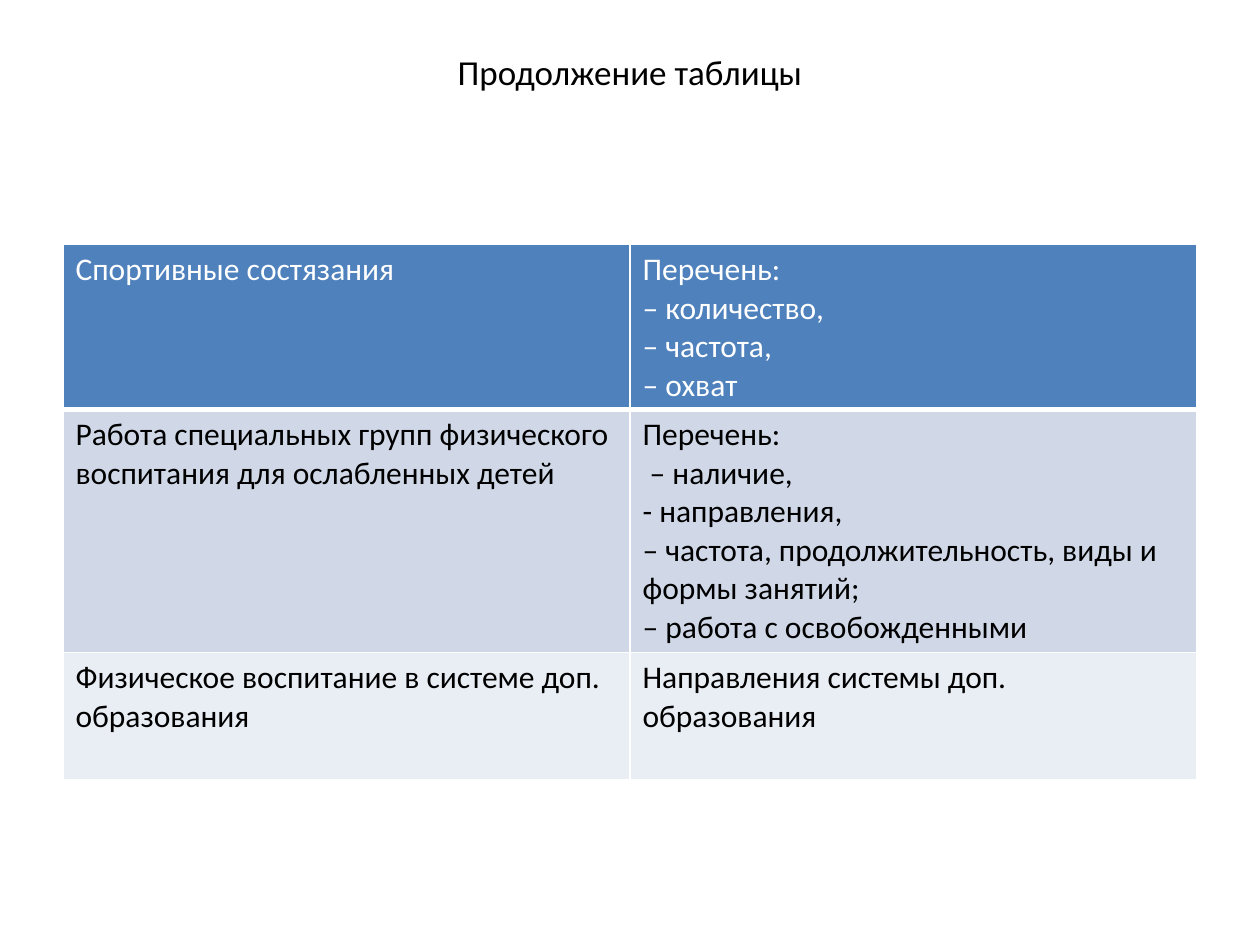
from lxml.etree import SubElement
from pptx import Presentation
from pptx.dml.color import RGBColor
from pptx.enum.text import MSO_ANCHOR as Anchor, PP_ALIGN as Align
from pptx.oxml.ns import qn
from pptx.util import Inches, Pt

WHITE = RGBColor(0xFF, 0xFF, 0xFF)
BLACK = RGBColor(0x00, 0x00, 0x00)
HEADER_BLUE = RGBColor(0x4F, 0x81, 0xBD)
BAND_DARK = RGBColor(0xD0, 0xD8, 0xE8)
BAND_LIGHT = RGBColor(0xE9, 0xED, 0xF4)

WIDTH, HEIGHT = Inches(10), Inches(7.5)
MARGIN = int(WIDTH * 0.05)
CONTENT_WIDTH = WIDTH - 2 * MARGIN
FONT = "Calibri"

# Each row: height in inches, fill, text colour, cell texts
ROWS = [
    (1.31, HEADER_BLUE, WHITE, (
        "Спортивные состязания",
        "Перечень:\n– количество,\n– частота,\n– охват")),
    (1.93, BAND_DARK, BLACK, (
        "Работа специальных групп физического воспитания для ослабленных детей",
        "Перечень:\n – наличие,\n- направления,\n"
        "– частота, продолжительность, виды и формы занятий;\n"
        "– работа с освобожденными")),
    (1.01, BAND_LIGHT, BLACK, (
        "Физическое воспитание в системе доп. образования",
        "Направления системы доп.\nобразования")),
]


def write_text(frame, text, size, color, align=Align.LEFT):
    frame.text = text
    frame.word_wrap = True
    for para in frame.paragraphs:
        para.alignment = align
        for span in para.runs:
            span.font.name = FONT
            span.font.size = Pt(size)
            span.font.bold = False
            span.font.color.rgb = color


def add_title(page, text):
    box = page.shapes.add_textbox(MARGIN, int(HEIGHT * 0.04),
                                  CONTENT_WIDTH, int(HEIGHT * 0.072))
    box.text_frame.vertical_anchor = Anchor.MIDDLE
    write_text(box.text_frame, text, 20, BLACK, Align.CENTER)


def set_borders(cell, top, bottom):
    properties = cell._tc.get_or_add_tcPr()
    for side, points in (("L", 1), ("R", 1), ("T", top), ("B", bottom)):
        line = SubElement(properties, qn(f"a:ln{side}"), w=str(Pt(points)))
        fill = SubElement(line, qn("a:solidFill"))
        SubElement(fill, qn("a:srgbClr"), val=str(WHITE))


def add_grid(page, rows):
    total = Inches(sum(row[0] for row in rows))
    table = page.shapes.add_table(len(rows), 2, MARGIN, Inches(1.94),
                                  CONTENT_WIDTH, total).table
    for index, (height, fill, color, texts) in enumerate(rows):
        table.rows[index].height = Inches(height)
        for column, text in enumerate(texts):
            cell = table.cell(index, column)
            write_text(cell.text_frame, text, 18, color)
            # A thick rule separates the header from the body
            set_borders(cell, top=3 if index == 1 else 1,
                        bottom=3 if index == 0 else 1)
            cell.fill.solid()
            cell.fill.fore_color.rgb = fill


def main():
    deck = Presentation()
    deck.slide_width, deck.slide_height = WIDTH, HEIGHT
    page = deck.slides.add_slide(deck.slide_layouts[6])
    add_title(page, "Продолжение таблицы")
    add_grid(page, ROWS)
    deck.save("out.pptx")


if __name__ == "__main__":
    main()
